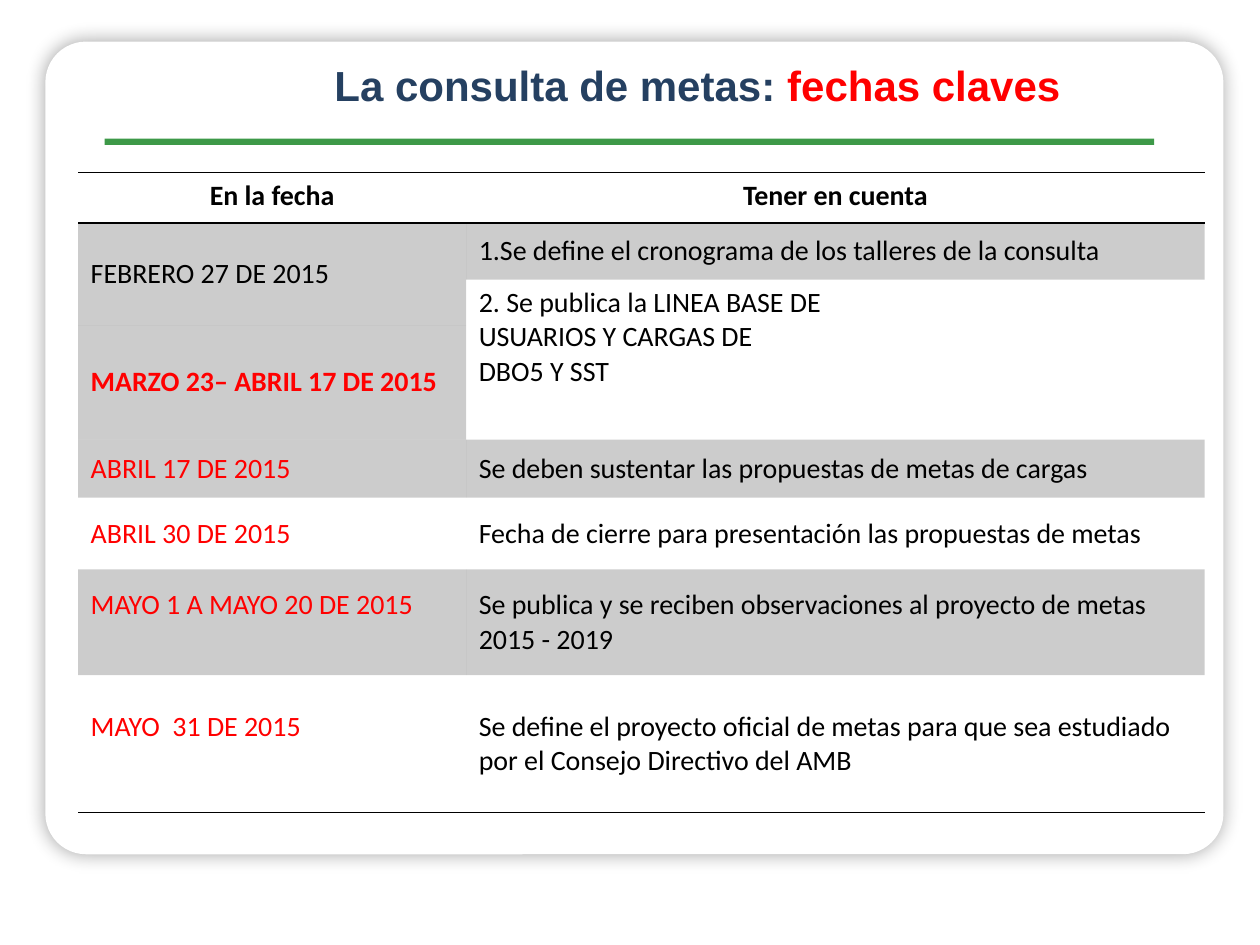
from lxml.etree import SubElement
from pptx import Presentation
from pptx.dml.color import RGBColor
from pptx.enum.shapes import MSO_SHAPE
from pptx.enum.text import MSO_ANCHOR, PP_ALIGN
from pptx.oxml import parse_xml
from pptx.oxml.ns import nsdecls, qn
from pptx.util import Inches, Pt

HUES = {
    "white": "FFFFFF",
    "black": "000000",
    "red": "FF0000",
    "navy": "254061",
    "green": "3D9948",
}
NO_GRID = "{2D5ABB26-0587-4C30-8999-92F81FD0307C}"
COLS = [3.08, 2.93, 2.93]
ROWS = [0.4, 0.45, 0.36, 0.55, 0.36, 0.46, 0.57, 0.84, 1.09]
DATES = [
    (1, 2, "FEBRERO 27 DE 2015", "black", True, 0.05),
    (3, 2, "MARZO 23– ABRIL 17 DE 2015", "red", True, 0.05),
    (5, 1, "ABRIL 17 DE 2015", "red", True, 0.05),
    (6, 1, "ABRIL 30 DE 2015", "red", False, 0.05),
    (7, 1, "MAYO 1 A MAYO 20 DE 2015", "red", True, 0.32),
    (8, 1, "MAYO  31 DE 2015", "red", False, 0.32),
]
TASKS = [
    (1, "1.Se define el cronograma de los talleres de la consulta", True),
    (5, "Se deben sustentar las propuestas de metas de cargas", True),
    (6, "Fecha de cierre para presentación las propuestas de metas", False),
    (7, "Se publica y se reciben observaciones al proyecto de metas 2015 - 2019", True),
    (8, "Se define el proyecto oficial de metas para que sea estudiado "
        "por el Consejo Directivo del AMB", False),
]


def tint(name):
    return RGBColor.from_string(HUES[name])


def add_run(para, text, hue, size, face, bold=False):
    run = para.add_run()
    run.text = text
    font = run.font
    font.name, font.size, font.bold = face, Pt(size), bold
    font.color.rgb = tint(hue)


def add_block(slide, kind, box, hue):
    shape = slide.shapes.add_shape(kind, *map(Inches, box))
    shape.shadow.inherit = False
    shape.fill.solid()
    shape.fill.fore_color.rgb = tint(hue)
    shape.line.fill.background()
    return shape


def add_panel(slide, box):
    panel = add_block(slide, MSO_SHAPE.ROUNDED_RECTANGLE, box, "white")
    panel.adjustments[0] = 0.05
    glow = SubElement(panel._element.spPr.find(qn("a:effectLst")), qn("a:outerShdw"),
                      blurRad=str(Pt(10.8)), dist="0", dir="5400000",
                      algn="ctr", rotWithShape="0")
    hue = SubElement(glow, qn("a:srgbClr"), val=HUES["black"])
    SubElement(hue, qn("a:alpha"), val="35000")


def add_title(slide, box):
    left, top, width, height = box
    frame = slide.shapes.add_textbox(*map(Inches, box)).text_frame
    frame.word_wrap = True
    para = frame.paragraphs[0]
    para.alignment = PP_ALIGN.CENTER
    add_run(para, "La consulta de metas: ", "navy", 24, "Arial", True)
    add_run(para, "fechas claves", "red", 24, "Arial", True)
    add_block(slide, MSO_SHAPE.RECTANGLE, (left - 0.69, top + 0.68, 8.33, 0.05), "green")


def add_edge(cell, side):
    cell._tc.get_or_add_tcPr().insert(0, parse_xml(
        f'<a:{side} {nsdecls("a")} w="{Pt(1)}"><a:solidFill>'
        f'<a:srgbClr val="{HUES["black"]}"/></a:solidFill></a:{side}>'))


def shade(cell):
    cell.fill.solid()
    cell.fill.fore_color.rgb = tint("black")
    hue = cell._tc.tcPr.find(".//" + qn("a:srgbClr"))
    SubElement(hue, qn("a:alpha"), val="20000")


def fill_cell(cell, text, hue="black", dark=False, bold=False, low=0.05):
    cell.margin_left = cell.margin_right = Inches(0.1)
    cell.margin_top, cell.margin_bottom = Inches(0.05), Inches(low)
    cell.vertical_anchor = MSO_ANCHOR.MIDDLE
    add_run(cell.text_frame.paragraphs[0], text, hue, 16, "Calibri", bold)
    if dark:
        shade(cell)


def add_dates(slide, box):
    frame = slide.shapes.add_table(len(ROWS), len(COLS), *map(Inches, box))
    grid = frame.table
    grid.first_row = grid.horz_banding = False
    grid._tbl.tblPr.find(qn("a:tableStyleId")).text = NO_GRID
    for col, width in zip(grid.columns, COLS):
        col.width = Inches(width)
    for row, height in zip(grid.rows, ROWS):
        row.height = Inches(height)
    for cell in grid.iter_cells():
        cell.fill.background()
        cell.margin_top = cell.margin_bottom = 0

    for col, text in enumerate(["En la fecha", "Tener en cuenta"]):
        cell = grid.cell(0, col)
        fill_cell(cell, text, bold=True)
        cell.vertical_anchor = MSO_ANCHOR.TOP
        cell.text_frame.paragraphs[0].alignment = PP_ALIGN.CENTER
    grid.cell(0, 1).merge(grid.cell(0, 2))

    for row, span, text, hue, dark, low in DATES:
        cell = grid.cell(row, 0)
        fill_cell(cell, text, hue, dark, row == 3, low)
        if span > 1:
            cell.merge(grid.cell(row + span - 1, 0))
    for row, text, dark in TASKS:
        fill_cell(grid.cell(row, 1), text, dark=dark)
        grid.cell(row, 1).merge(grid.cell(row, 2))
    fill_cell(grid.cell(2, 1), "2. Se publica la LINEA BASE DE USUARIOS Y CARGAS DE DBO5 Y SST")
    for col in (1, 2):
        grid.cell(2, col).merge(grid.cell(3, col))

    for col in range(len(COLS)):
        for row, side in [(0, "lnB"), (0, "lnT"), (8, "lnB")]:
            add_edge(grid.cell(row, col), side)


def main():
    deck = Presentation()
    deck.slide_width, deck.slide_height = Inches(10), Inches(7.5)
    slide = deck.slides.add_slide(deck.slide_layouts[6])
    add_panel(slide, (0.36, 0.33, 9.35, 6.45))
    add_title(slide, (1.52, 0.42, 8.03, 0.5))
    add_dates(slide, (0.62, 1.37, sum(COLS), sum(ROWS)))
    deck.save("out.pptx")


if __name__ == "__main__":
    main()
